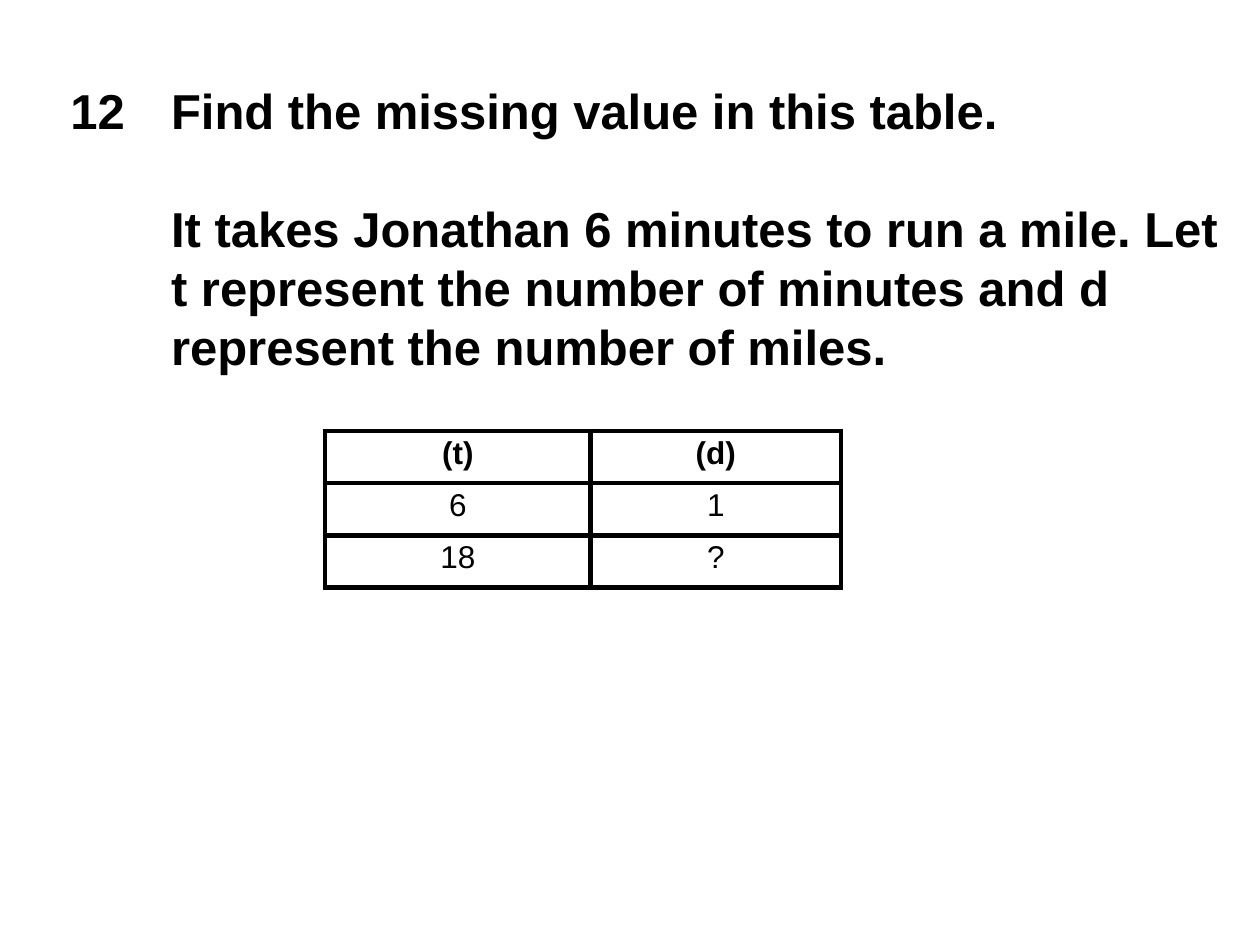
"""Build a maths question slide with a two-column value table."""
from lxml import etree
from pptx import Presentation
from pptx.dml.color import RGBColor
from pptx.enum.text import PP_ALIGN
from pptx.oxml.ns import qn
from pptx.util import Cm, Pt

LEFT, CENTER = PP_ALIGN.LEFT, PP_ALIGN.CENTER
COLORS = {"ink": "000000", "paper": "FFFFFF"}
FONT = "Arial"
LINE = 33.75

NUMBER = ["12"]
QUESTION = [
    "Find the missing value in this table.",
    "It takes Jonathan 6 minutes to run a mile. Let t represent the number "
    "of minutes and d represent the number of miles.",
]
ROWS = [("(t)", "(d)"), ("6", "1"), ("18", "?")]

BOXES = [(NUMBER, 1.22, 23.83, 1.4), (QUESTION, 3.25, 21.79, 6.2)]
BOX_TOP = 1.47
TABLE_LEFT, TABLE_TOP = 6.55, 8.69
COL_WIDTHS = [5.36, 5.04]
ROW_HEIGHT = 1.05
BORDER = Pt(3)


def write(p, text, size=28, bold=True, align=LEFT, line=None, before=0):
    p.alignment = align
    p.space_before = Pt(before)
    if line:
        p.line_spacing = Pt(line)
    r = p.add_run()
    r.text = text
    r.font.name, r.font.size, r.font.bold = FONT, Pt(size), bold
    r.font.color.rgb = RGBColor.from_string(COLORS["ink"])


def add_text(s, texts, left, width, height):
    tf = s.shapes.add_textbox(Cm(left), Cm(BOX_TOP), Cm(width), Cm(height)).text_frame
    tf.word_wrap = True
    tf.margin_left = tf.margin_right = Cm(0.2)
    tf.margin_top, tf.margin_bottom = Cm(0.15), Cm(0.1)
    for i, text in enumerate(texts):
        p = tf.add_paragraph() if i else tf.paragraphs[0]
        write(p, text, line=LINE, before=LINE if i else 0)


def add_borders(cell):
    tc_pr = cell._tc.get_or_add_tcPr()
    for i, side in enumerate(("lnL", "lnR", "lnT", "lnB")):
        ln = etree.Element(qn(f"a:{side}"), w=str(BORDER))
        fill = etree.SubElement(ln, qn("a:solidFill"))
        etree.SubElement(fill, qn("a:srgbClr"), val=COLORS["ink"])
        tc_pr.insert(i, ln)


def add_values(s):
    table = s.shapes.add_table(
        len(ROWS), len(COL_WIDTHS), Cm(TABLE_LEFT), Cm(TABLE_TOP),
        Cm(sum(COL_WIDTHS)), Cm(ROW_HEIGHT * len(ROWS))).table
    for col, width in zip(table.columns, COL_WIDTHS):
        col.width = Cm(width)
    for i, values in enumerate(ROWS):
        table.rows[i].height = Cm(ROW_HEIGHT)
        for j, value in enumerate(values):
            cell = table.cell(i, j)
            cell.margin_left = cell.margin_right = Cm(0.23)
            cell.margin_top = cell.margin_bottom = Cm(0.1)
            cell.fill.solid()
            cell.fill.fore_color.rgb = RGBColor.from_string(COLORS["paper"])
            add_borders(cell)
            write(cell.text_frame.paragraphs[0], value, size=18, bold=i == 0, align=CENTER)


def main():
    prs = Presentation()
    prs.slide_width, prs.slide_height = Cm(25.4), Cm(19.05)
    s = prs.slides.add_slide(prs.slide_layouts[6])
    for box in BOXES:
        add_text(s, *box)
    add_values(s)
    prs.save("out.pptx")


if __name__ == "__main__":
    main()
